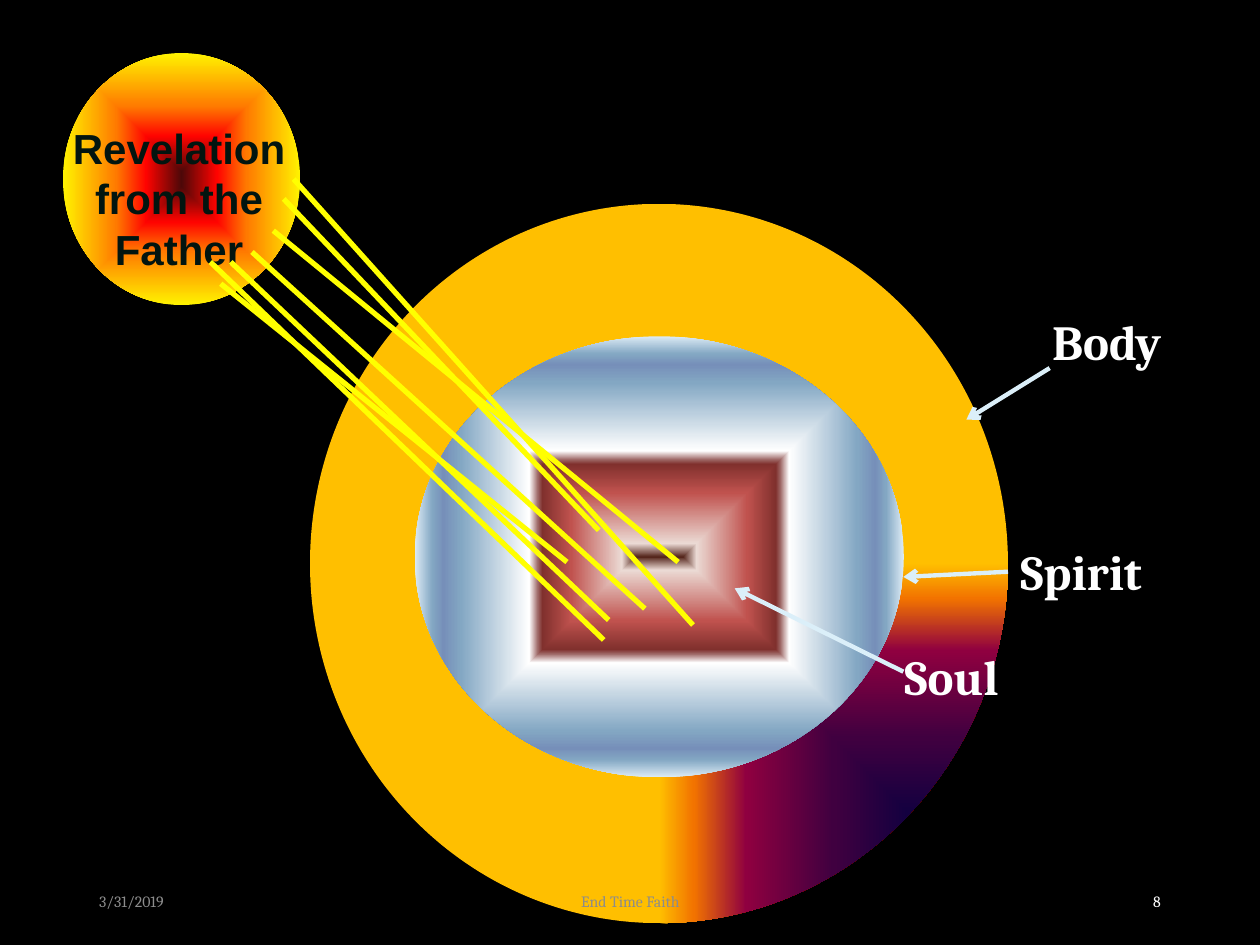
from lxml.etree import SubElement
from pptx import Presentation
from pptx.dml.color import RGBColor
from pptx.enum.shapes import MSO_CONNECTOR, MSO_SHAPE
from pptx.enum.text import MSO_ANCHOR, MSO_AUTO_SIZE, PP_ALIGN
from pptx.oxml.ns import qn
from pptx.util import Cm, Pt

THEME = {
    "back": "000000",
    "ray": ("FFFF00", 3),
    "arrow": ("DBEFF9", 2.5),
    "call": {"name": "Arial", "size": 24, "bold": True, "color": "021510"},
    "label": {"name": "Cambria", "size": 28, "bold": True, "color": "FFFFFF"},
    "foot": {"name": "Cambria", "size": 9, "bold": False, "color": "8C8C8C"},
    "page": {"name": "Cambria", "size": 9, "bold": False, "color": "FFFFFF"},
    "body": [(0, "000000"), (20, "000040"), (50, "400040"), (75, "8F0040"),
             (90, "F27300"), (100, "FFBF00")],
    "spirit": [(0, "55261C"), (6, "EBDAD4"), (29, "C0524E"), (42, "80302D"),
               (44, "9C6563"), (48, "FFFFFF"), (79, "83A7C3"), (87, "768FB9"),
               (92, "83A7C3"), (100, "DCEBF5")],
    "sun": [(0, "4D0808"), (30, "FF0300"), (55, "FF7A00"), (100, "FFF200")],
}

CENTRE, CORNER = (50, 50, 50, 50), (100, 100, 0, 0)

# Lengths in centimetres: left, top, width, height
DISCS = [
    ("body", (6.25, 4.11, 14.07, 14.5), "rect", CORNER),
    ("spirit", (8.36, 6.78, 9.86, 8.89), "shape", CENTRE),
    ("sun", (1.27, 1.07, 4.78, 5.08), "shape", CENTRE),
]
CALL = ("Revelation from the Father", (1.07, 2.34, 5.08, 3.18))
RAYS = [
    ((4.65, 5.28), (12.27, 12.5)),
    ((4.45, 5.72), (11.43, 11.33)),
    ((5.72, 4.01), (12.07, 10.69)),
    ((5.08, 5.08), (13, 12.27)),
    ((5.92, 3.61), (13.97, 12.6)),
    ((4.24, 5.28), (12.17, 12.9)),
    ((5.51, 4.65), (13.67, 11.33)),
]
# Text, box, arrow start, arrow end, whether the arrow is joined to the box
LABELS = [
    ("Body", (20.96, 6.15, 2.84, 1.45), (21.16, 7.42), (19.48, 8.46), False),
    ("Spirit", (20.32, 10.8, 3.07, 1.45), (20.32, 11.53), (18.21, 11.63), True),
    ("Soul", (17.98, 12.9, 2.51, 1.45), (18.21, 13.54), (14.81, 11.86), False),
]
FOOTS = [
    ("3/31/2019", 1.75, 5.72, PP_ALIGN.LEFT, "foot"),
    ("End Time Faith", 8.41, 8.59, PP_ALIGN.CENTER, "foot"),
    ("8", 17.93, 5.72, PP_ALIGN.RIGHT, "page"),
]
FOOT_TOP, FOOT_HIGH = 17.65, 1.02


def cms(nums):
    return [Cm(n) for n in nums]


def add_disc(slide, stops, box, path, focus):
    """Add an ellipse whose gradient spreads out from the focus."""
    disc = slide.shapes.add_shape(MSO_SHAPE.OVAL, *cms(box))
    disc.shadow.inherit = False
    disc.line.fill.background()
    disc.fill.gradient()
    grad = disc.element.spPr.find(qn("a:gradFill"))
    for part in list(grad):
        grad.remove(part)
    group = SubElement(grad, qn("a:gsLst"))
    for pos, tint in stops:
        stop = SubElement(group, qn("a:gs"), pos=str(pos * 1000))
        SubElement(stop, qn("a:srgbClr"), val=tint)
    way = SubElement(grad, qn("a:path"), path=path)
    sides = {k: str(v * 1000) for k, v in zip("ltrb", focus)}
    SubElement(way, qn("a:fillToRect"), **sides)


def add_text(slide, text, box, style, align=PP_ALIGN.LEFT, **frame):
    shape = slide.shapes.add_textbox(*cms(box))
    for key, val in {"word_wrap": True, **frame}.items():
        setattr(shape.text_frame, key, val)
    para = shape.text_frame.paragraphs[0]
    para.alignment = align
    run = para.add_run()
    run.text = text
    form = {**style, "size": Pt(style["size"])}
    run.font.color.rgb = RGBColor.from_string(form.pop("color"))
    for key, val in form.items():
        setattr(run.font, key, val)
    return shape


def add_line(slide, start, end, style, head=False):
    tint, width = style
    line = slide.shapes.add_connector(
        MSO_CONNECTOR.STRAIGHT, *cms(start), *cms(end))
    line.line.color.rgb = RGBColor.from_string(tint)
    line.line.width = Pt(width)
    if head:
        SubElement(line.line._get_or_add_ln(), qn("a:tailEnd"), type="arrow")
    SubElement(line.element.spPr, qn("a:effectLst"))
    return line


def main():
    deck = Presentation()
    deck.slide_width, deck.slide_height = Cm(25.4), Cm(19.05)
    slide = deck.slides.add_slide(deck.slide_layouts[6])
    fill = slide.background.fill
    fill.solid()
    fill.fore_color.rgb = RGBColor.from_string(THEME["back"])

    for name, box, path, focus in DISCS:
        add_disc(slide, THEME[name], box, path, focus)
    add_text(slide, *CALL, THEME["call"], PP_ALIGN.CENTER)
    for start, end in RAYS:
        add_line(slide, start, end, THEME["ray"])
    for text, box, start, end, joined in LABELS:
        label = add_text(slide, text, box, THEME["label"], word_wrap=False,
                         auto_size=MSO_AUTO_SIZE.SHAPE_TO_FIT_TEXT)
        arrow = add_line(slide, start, end, THEME["arrow"], head=True)
        if joined:
            arrow.begin_connect(label, 1)
    for text, left, wide, align, style in FOOTS:
        add_text(slide, text, (left, FOOT_TOP, wide, FOOT_HIGH), THEME[style],
                 align, vertical_anchor=MSO_ANCHOR.MIDDLE)
    deck.save("out.pptx")


if __name__ == "__main__":
    main()
